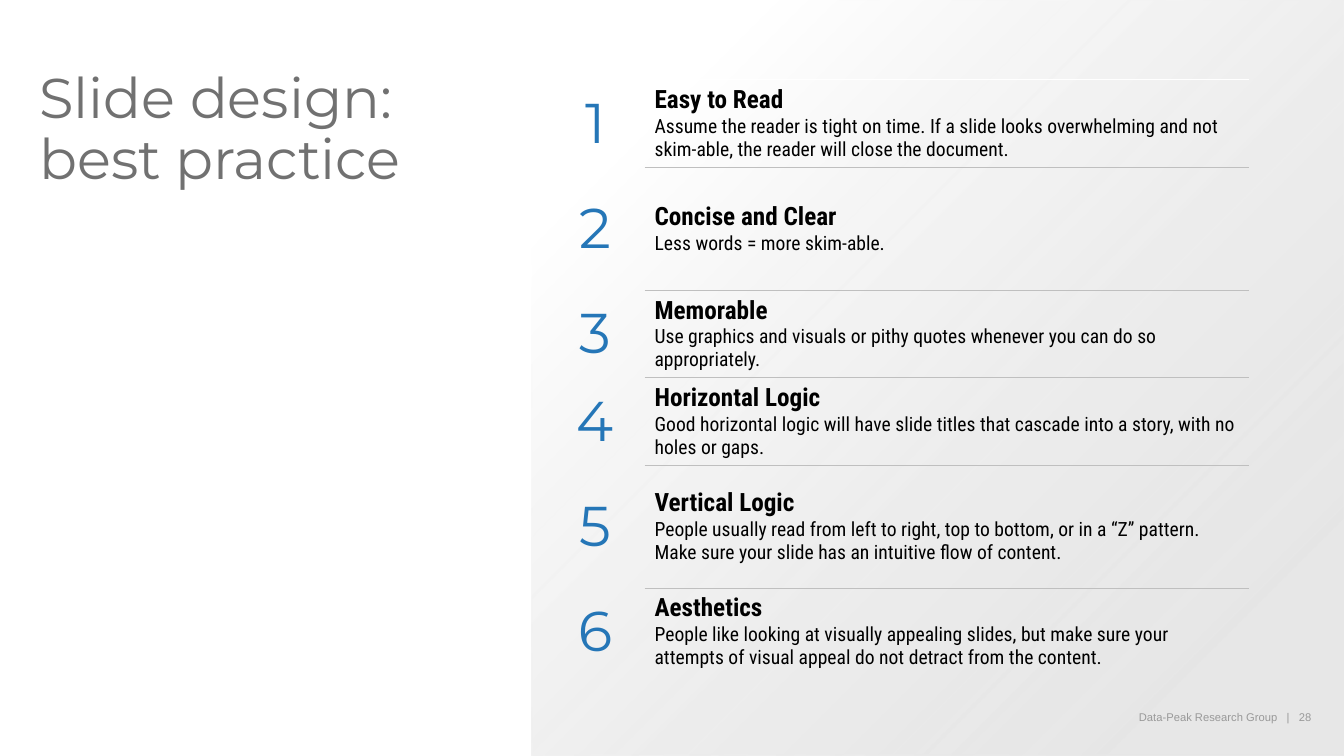
from pptx import Presentation
from pptx.dml.color import RGBColor
from pptx.enum.shapes import MSO_SHAPE
from pptx.enum.text import MSO_ANCHOR, MSO_AUTO_SIZE, PP_ALIGN
from pptx.oxml.ns import qn
from pptx.util import Inches, Pt
from lxml.etree import SubElement

WIDTH, HEIGHT = 13.34, 7.5
COLORS = {"title": "717171", "number": "2576B7", "text": "000000", "footer": "242424",
          "white": "FFFFFF", "shade": "D9D9D9", "rule": "BFBFBF"}
NO_STYLE = "{2D5ABB26-0587-4C30-8999-92F81FD0307C}"
LOW, HIGH = 0.86, 1.22
TOP_RULE, ROW_RULE = ("white", 1), ("rule", 0.25)
PRACTICES = [
    ("Easy to Read", "Assume the reader is tight on time. If a slide looks overwhelming and not "
     "skim-able, the reader will close the document.", LOW),
    ("Concise and Clear", "Less words = more skim-able.", HIGH),
    ("Memorable", "Use graphics and visuals or pithy quotes whenever you can do so "
     "appropriately.", LOW),
    ("Horizontal Logic", "Good horizontal logic will have slide titles that cascade into a story, "
     "with no holes or gaps.", LOW),
    ("Vertical Logic", "People usually read from left to right, top to bottom, or in a “Z” pattern. "
     "Make sure your slide has an intuitive flow of content.", HIGH),
    ("Aesthetics", "People like looking at visually appealing slides, but make sure your attempts "
     "of visual appeal do not detract from the content.", LOW),
]
RULES = [TOP_RULE, ROW_RULE, ROW_RULE, None, ROW_RULE, ROW_RULE, None]


def inches(box):
    return [Inches(v) for v in box]


def style(p, font, size, color, bold=False, align=PP_ALIGN.LEFT):
    p.alignment = align
    for r in p.runs:
        r.font.name, r.font.size, r.font.bold = font, Pt(size), bold
        r.font.color.rgb = RGBColor.from_string(COLORS[color])


def set_margins(tf, right=0):
    tf.margin_left = tf.margin_top = tf.margin_bottom = 0
    tf.margin_right = Inches(right)


def add_footer(slide, box):
    tf = slide.shapes.add_textbox(*inches(box)).text_frame
    tf.word_wrap = True
    set_margins(tf, 0.1)
    tf.text = "Data-Peak Research Group   |   28"
    style(tf.paragraphs[0], "Arial", 8, "footer", align=PP_ALIGN.RIGHT)


def add_panel(slide, box):
    sp = slide.shapes.add_shape(MSO_SHAPE.RECTANGLE, *inches(box))
    sp.shadow.inherit = False
    sp.line.fill.background()
    sp.fill.gradient()
    sp.fill.gradient_angle = 315
    stops = sp.fill.gradient_stops
    for stop, position, color in zip(stops, (0.15, 0.85), ("white", "shade")):
        stop.position = position
        stop.color.rgb = RGBColor.from_string(COLORS[color])
    shade = list(sp._element.iter(qn("a:gs")))[-1][0]
    SubElement(shade, qn("a:alpha"), val="64000")


def add_title(slide, box):
    title = slide.shapes.title
    title.left, title.top, title.width, title.height = inches(box)
    tf = title.text_frame
    tf.text = "Slide design:\vbest practice"
    tf.word_wrap = True
    tf.auto_size = MSO_AUTO_SIZE.NONE
    tf.vertical_anchor = MSO_ANCHOR.TOP
    set_margins(tf)
    p = tf.paragraphs[0]
    p.line_spacing = 0.9
    style(p, "Montserrat", 40, "title")


def add_border(cell, side, rule, index):
    color, width = rule
    tcPr = cell._tc.get_or_add_tcPr()
    ln = SubElement(tcPr, qn(f"a:{side}"), w=str(Pt(width)))
    fill = SubElement(ln, qn("a:solidFill"))
    SubElement(fill, qn("a:srgbClr"), val=COLORS[color])
    tcPr.insert(index, ln)


def add_practices(slide, box, number_share):
    frame = slide.shapes.add_table(len(PRACTICES), 2, *inches(box))
    table = frame.table
    table.first_row = table.horz_banding = False
    table._tbl.tblPr.find(qn("a:tableStyleId")).text = NO_STYLE
    for column, share in zip(table.columns, (number_share, 1 - number_share)):
        column.width = Inches(box[2] * share)
    for i, (heading, advice, height) in enumerate(PRACTICES):
        table.rows[i].height = Inches(height)
        number, body = table.cell(i, 0), table.cell(i, 1)
        for cell in (number, body):
            cell.vertical_anchor = MSO_ANCHOR.MIDDLE
            cell.fill.background()
        number.text = str(i + 1)
        style(number.text_frame.paragraphs[0], "Montserrat", 40, "number",
              align=PP_ALIGN.CENTER)
        body.text = f"{heading}\n{advice}"
        first, second = body.text_frame.paragraphs
        style(first, "Roboto Condensed", 18, "text", bold=True)
        style(second, "Roboto Condensed", 14, "text")
        sides = [(s, r) for s, r in zip(("lnT", "lnB"), RULES[i:i + 2]) if r]
        for index, (side, rule) in enumerate(sides):
            add_border(body, side, rule, index)


def main():
    prs = Presentation()
    prs.slide_width, prs.slide_height = Inches(WIDTH), Inches(HEIGHT)
    slide = prs.slides.add_slide(prs.slide_layouts[5])
    panel_left = 5.28
    add_footer(slide, (9.36, 7.05, 3.76, 0.13))
    add_panel(slide, (panel_left, 0, WIDTH - panel_left, HEIGHT))
    add_title(slide, (0.39, 0.7, 3.85, 2.01))
    add_practices(slide, (5.42, 0.79, 6.98, sum(row[2] for row in PRACTICES)), 0.14)
    prs.save("out.pptx")


if __name__ == "__main__":
    main()
